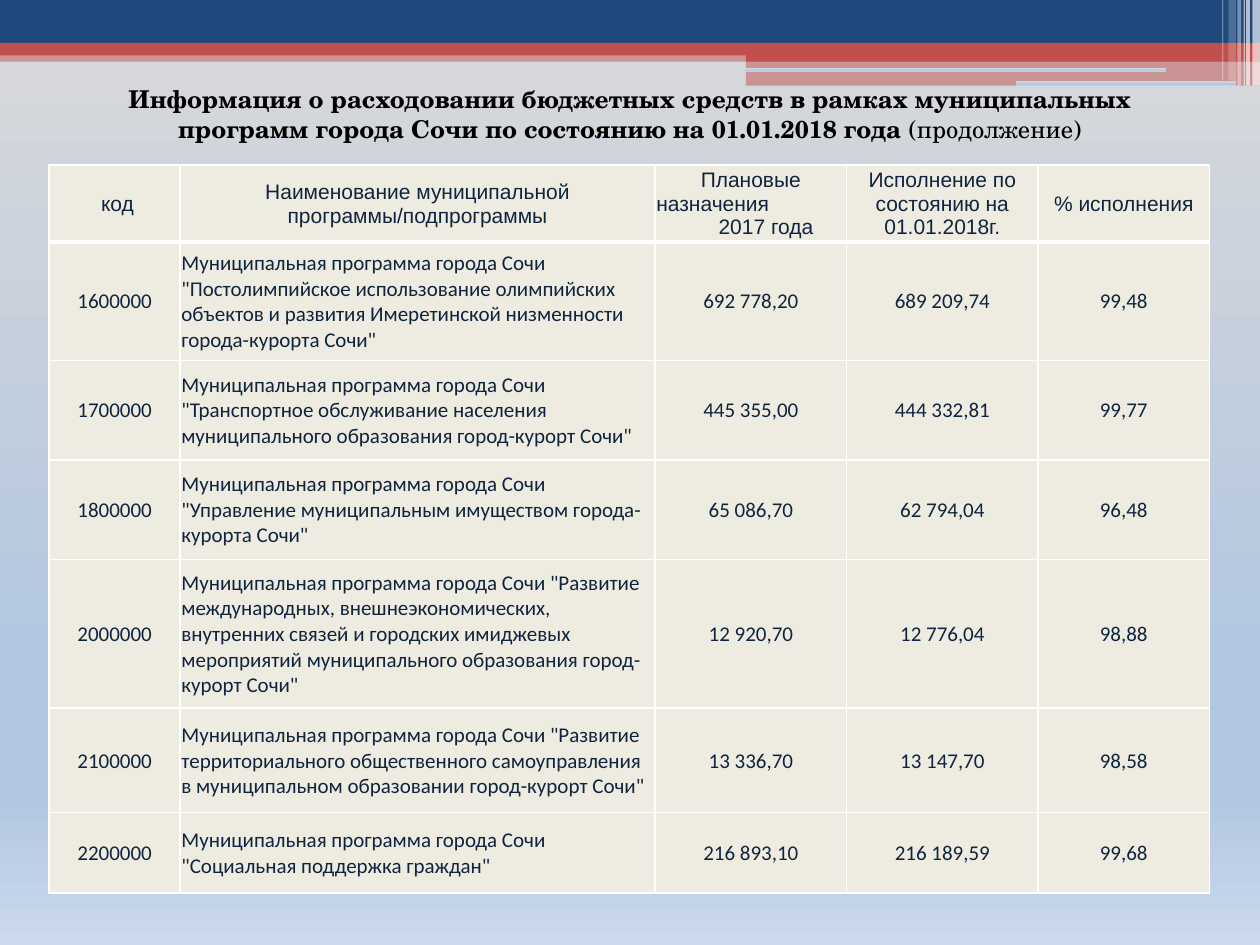
from pptx import Presentation
from pptx.dml.color import RGBColor
from pptx.enum.shapes import MSO_SHAPE
from pptx.enum.text import MSO_ANCHOR, MSO_AUTO_SIZE, PP_ALIGN
from pptx.oxml import parse_xml
from pptx.oxml.ns import nsdecls, qn
from pptx.util import Inches, Pt

NAVY, RED, WHITE, BLACK = "1F497D", "C0504D", "FFFFFF", "000000"
INK, CREAM = "0F243E", "EEECE1"
SKY = [(0, "D9D9D9"), (74, "B0C6E1"), (83, "B0C6E1"), (100, "CAD9EB")]

# left, top, width, height, colour, opacity in percent
BANDS = [
    (0, 0.4, 10, 0.09, RED, 50),
    (0, 0, 10, 0.34, NAVY, 100),
    (0, 0.34, 10, 0.1, RED, 100),
    (5.92, 0.39, 4.08, 0.1, RED, 100),
    (5.92, 0.48, 4.08, 0.2, RED, 50),
]
SLOTS = [(5.91, 0.54, 3.35, 0.03), (8.06, 0.64, 1.75, 0.04)]
# left, width, height, opacity in percent
STRIPES = [
    (9.94, 0.06, 0.68, 65),
    (9.89, 0.03, 0.68, 65),
    (9.87, 0.01, 0.68, 60),
    (9.82, 0.03, 0.68, 40),
    (9.75, 0.06, 0.64, 20),
    (9.7, 0.01, 0.64, 30),
]

TITLE = ("Информация о расходовании бюджетных средств в рамках муниципальных "
         "программ города Сочи по состоянию на 01.01.2018 года ")
COLUMNS = [1.04, 3.77, 1.52, 1.52, 1.36]
ROWS = [0.61, 0.94, 0.79, 0.79, 1.18, 0.83, 0.64]
HEADER = [" код", "Наименование муниципальной программы/подпрограммы",
          "Плановые\nназначения\n2017 года",
          "Исполнение по состоянию на 01.01.2018г.", "% исполнения"]
PREFIX = "Муниципальная программа города Сочи "
PROGRAMS = [
    ("1600000", '"Постолимпийское использование олимпийских объектов и развития '
     'Имеретинской низменности города-курорта Сочи"',
     "692 778,20", "689 209,74", "99,48"),
    ("1700000", '"Транспортное обслуживание населения муниципального образования '
     'город-курорт Сочи"', "445 355,00", "444 332,81", "99,77"),
    ("1800000", '"Управление муниципальным имуществом города-курорта Сочи"',
     "65 086,70", "62 794,04", "96,48"),
    ("2000000", '"Развитие международных, внешнеэкономических, внутренних связей и '
     'городских имиджевых мероприятий муниципального образования '
     'город-курорт Сочи"', "12 920,70", "12 776,04", "98,88"),
    ("2100000", '"Развитие территориального общественного самоуправления в '
     'муниципальном образовании город-курорт Сочи"',
     "13 336,70", "13 147,70", "98,58"),
    ("2200000", '"Социальная поддержка граждан"',
     "216 893,10", "216 189,59", "99,68"),
]


def paint(fill, color):
    fill.solid()
    fill.fore_color.rgb = RGBColor.from_string(color)


def paint_sky(fill, properties):
    """Swap the solid fill held by properties for the sky gradient."""
    paint(fill, WHITE)
    stops = "".join(f'<a:gs pos="{place * 1000}"><a:srgbClr val="{color}"/></a:gs>'
                    for place, color in SKY)
    gradient = parse_xml(f'<a:gradFill {nsdecls("a")} rotWithShape="1">'
                         f'<a:gsLst>{stops}</a:gsLst>'
                         '<a:lin ang="5400000" scaled="0"/></a:gradFill>')
    properties.replace(properties.find(qn("a:solidFill")), gradient)


def add_block(page, kind, left, top, width, height):
    block = page.shapes.add_shape(kind, Inches(left), Inches(top),
                                  Inches(width), Inches(height))
    block.shadow.inherit = False
    block.line.fill.background()
    return block


def add_bar(page, left, top, width, height, color, opacity):
    bar = add_block(page, MSO_SHAPE.RECTANGLE, left, top, width, height)
    paint(bar.fill, color)
    if opacity < 100:
        tint = bar._element.spPr.find(qn("a:solidFill"))[0]
        tint.append(parse_xml(f'<a:alpha {nsdecls("a")} val="{opacity * 1000}"/>'))


def add_slot(page, left, top, width, height):
    slot = add_block(page, MSO_SHAPE.ROUNDED_RECTANGLE, left, top, width, height)
    paint_sky(slot.fill, slot._element.spPr)


def style_span(span, font, size, color, bold=False):
    span.font.name, span.font.size, span.font.bold = font, Pt(size), bold
    span.font.color.rgb = RGBColor.from_string(color)


def add_title(page):
    box = page.shapes.add_textbox(Inches(0.55), Inches(0.62), Inches(8.9), Inches(0.57))
    frame = box.text_frame
    frame.word_wrap = True
    frame.auto_size = MSO_AUTO_SIZE.SHAPE_TO_FIT_TEXT
    para = frame.paragraphs[0]
    para.alignment = PP_ALIGN.CENTER
    for text, bold in [(TITLE, True), ("(продолжение)", False)]:
        span = para.add_run()
        span.text = text
        style_span(span, "TeX Gyre Schola", 14, BLACK, bold)


def set_borders(cell, top, bottom):
    properties = cell._tc.get_or_add_tcPr()
    for side, points in [("L", 1), ("R", 1), ("T", top), ("B", bottom)]:
        properties.append(parse_xml(
            f'<a:ln{side} {nsdecls("a")} w="{Pt(points)}"><a:solidFill>'
            f'<a:srgbClr val="{WHITE}"/></a:solidFill></a:ln{side}>'))


def fill_cell(cell, text, font, alignment):
    cell.margin_left = cell.margin_top = cell.margin_right = Inches(0.01)
    cell.margin_bottom = 0
    cell.vertical_anchor = MSO_ANCHOR.MIDDLE
    cell.text_frame.text = text
    for para in cell.text_frame.paragraphs:
        para.alignment = alignment
        for span in para.runs:
            style_span(span, font, 12, INK)


def add_program_table(page):
    table = page.shapes.add_table(len(ROWS), len(COLUMNS), Inches(0.39), Inches(1.31),
                                  Inches(sum(COLUMNS)), Inches(sum(ROWS))).table
    table.first_row = table.horz_banding = False
    for column, width in zip(table.columns, COLUMNS):
        column.width = Inches(width)
    for row, height in zip(table.rows, ROWS):
        row.height = Inches(height)

    body = [(code, PREFIX + name, *values) for code, name, *values in PROGRAMS]
    for r, texts in enumerate([HEADER] + body):
        for c, text in enumerate(texts):
            cell = table.cell(r, c)
            is_name = r > 0 and c == 1
            set_borders(cell, 3 if r == 1 else 1, 3 if r == 0 else 1)
            paint(cell.fill, CREAM)
            fill_cell(cell, text, "Calibri" if r else "Arial",
                      PP_ALIGN.LEFT if is_name else PP_ALIGN.CENTER)

    # Staggered lines of the plan heading
    _, middle, last = table.cell(0, 2).text_frame.paragraphs
    middle.alignment = PP_ALIGN.LEFT
    last._p.get_or_add_pPr().set("marL", str(Inches(0.24)))


def main():
    deck = Presentation()
    deck.slide_width, deck.slide_height = Inches(10), Inches(7.5)
    page = deck.slides.add_slide(deck.slide_layouts[6])

    # Background and header decoration
    fill = page.background.fill
    fill.solid()
    paint_sky(fill, page._element.cSld.bg.bgPr)
    for band in BANDS:
        add_bar(page, *band)
    for slot in SLOTS:
        add_slot(page, *slot)
    for left, width, height, opacity in STRIPES:
        add_bar(page, left, 0, width, height, WHITE, opacity)

    # Content
    add_program_table(page)
    add_title(page)
    deck.save("out.pptx")


if __name__ == "__main__":
    main()
